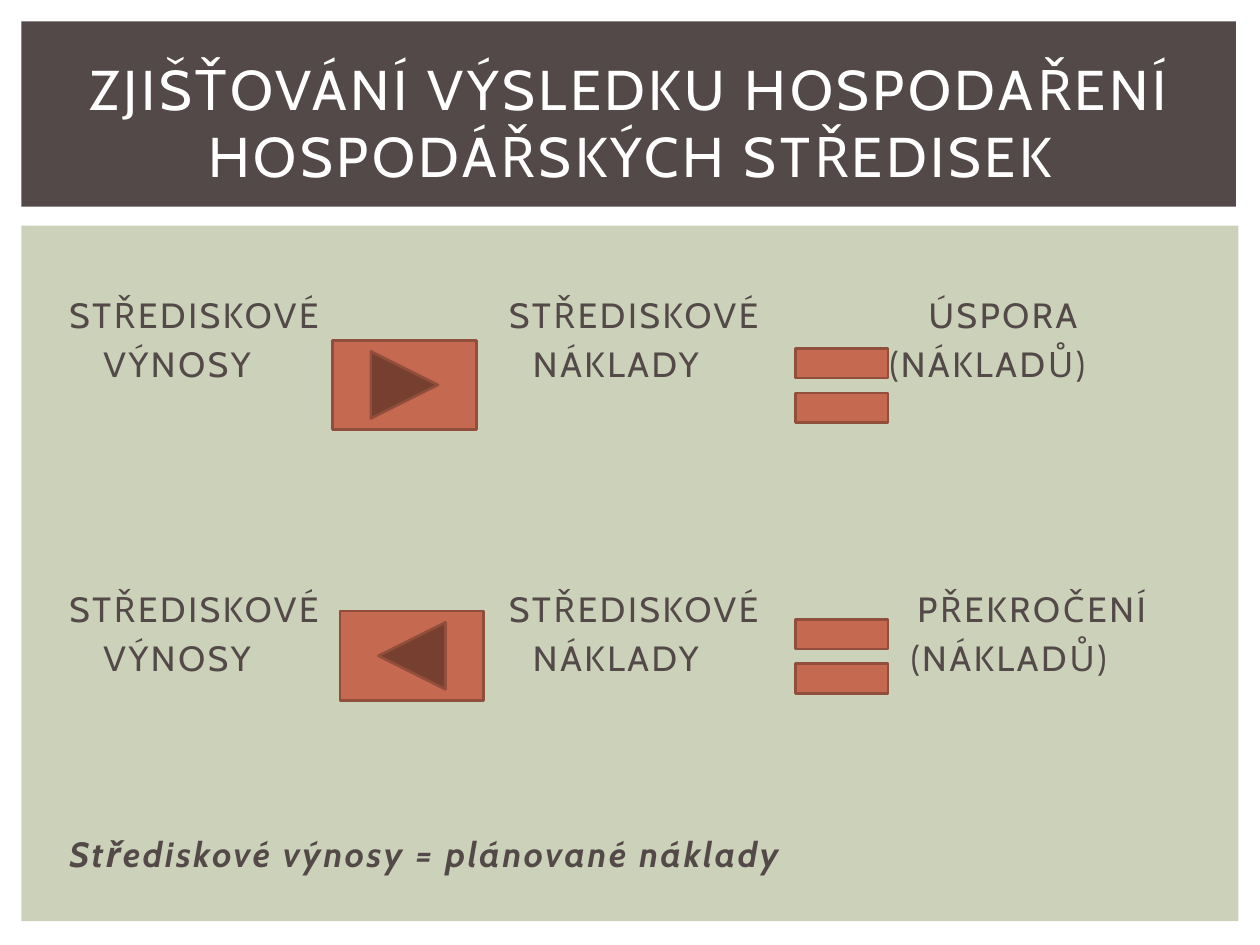
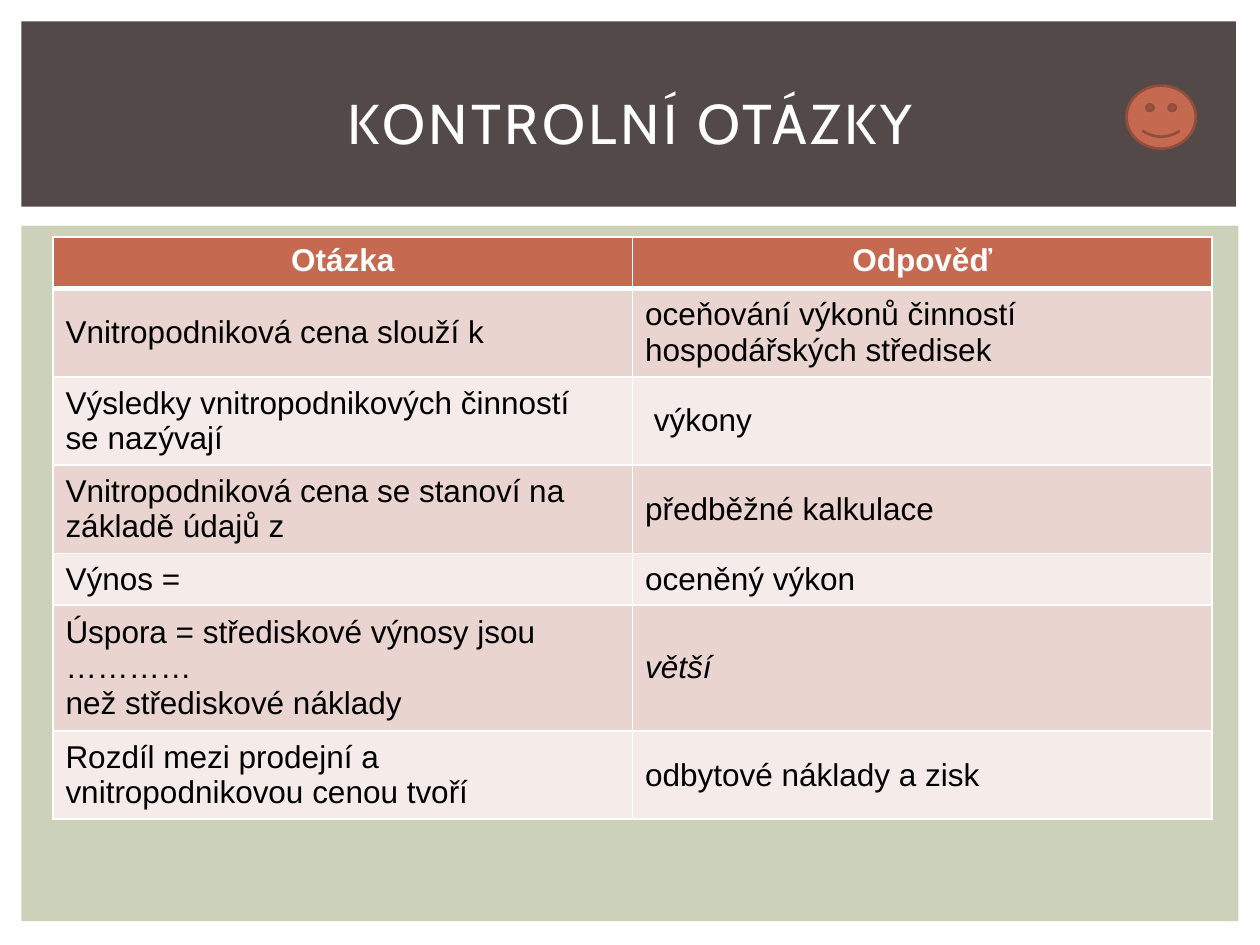
"""Build two slides on the results of cost centres and save them as out.pptx."""
from dataclasses import dataclass

from lxml import etree
from pptx import Presentation
from pptx.dml.color import RGBColor
from pptx.enum import shapes, text
from pptx.oxml import ns
from pptx.util import Inches, Pt

SHAPE = shapes.MSO_SHAPE
ALIGN = text.PP_ALIGN
ANCHOR = text.MSO_ANCHOR


@dataclass(frozen=True)
class Theme:
    """Colours, fonts and type sizes shared by the slides."""
    dark: str = "534949"
    panel: str = "CCD1B9"
    accent: str = "C66951"
    edge: str = "924E3C"
    white: str = "FFFFFF"
    black: str = "000000"
    rows: tuple = ("EAD4D0", "F5EBE9")
    head_font: str = "Cabin"
    table_font: str = "Arial"
    title_size: int = 32
    body_size: int = 20
    table_size: int = 18


THEME = Theme()

PANEL = (0.17, 1.79, 9.66, 5.52)
BAND = (0.17, 0.17, 9.64, 1.47)
TITLE = (0.42, 0.39, 9.17, 1.15)
EQUATIONS = (0.55, 2.33, 9.05, 4.7)
TABLE = (0.42, 1.88, 9.2, 2.87)

RESULT_TITLE = "ZJIŠŤOVÁNÍ VÝSLEDKU HOSPODAŘENÍ HOSPODÁŘSKÝCH STŘEDISEK"
LINE_PITCH, LINE_HEIGHT = 28, 24
EQUATION_LINES = [
    (0, [(0, "STŘEDISKOVÉ"), (3.49, "STŘEDISKOVÉ"), (6.82, "ÚSPORA")]),
    (1, [(0.27, "VÝNOSY"), (3.68, "NÁKLADY"), (6.51, "(NÁKLADŮ)")]),
    (5, [(0, "STŘEDISKOVÉ"), (3.49, "STŘEDISKOVÉ"), (6.73, "PŘEKROČENÍ")]),
    (1, [(0.27, "VÝNOSY"), (3.68, "NÁKLADY"), (6.68, "(NÁKLADŮ)")]),
]
SUMMARY = (4, [(0, "Střediskové výnosy = plánované náklady")])
SIGNS = [
    (SHAPE.ACTION_BUTTON_FORWARD_OR_NEXT, (2.64, 2.7, 1.14, 0.71)),
    (SHAPE.ACTION_BUTTON_BACK_OR_PREVIOUS, (2.7, 4.85, 1.14, 0.71)),
    (SHAPE.MATH_EQUAL, (6.18, 2.56, 1, 1)),
    (SHAPE.MATH_EQUAL, (6.18, 4.71, 1, 1)),
]

QUIZ_TITLE = "KONTROLNÍ OTÁZKY"
SMILEY = (SHAPE.SMILEY_FACE, (8.94, 0.68, 0.55, 0.5))
HEADER = ("Otázka", "Odpověď")
QUESTIONS = [
    ("Vnitropodniková cena slouží k",
     "oceňování výkonů činností hospodářských středisek"),
    ("Výsledky vnitropodnikových činností\nse nazývají", " výkony"),
    ("Vnitropodniková cena se stanoví na základě údajů z",
     "předběžné kalkulace"),
    ("Výnos =", "oceněný výkon"),
    ("Úspora = střediskové výnosy jsou …………\nnež střediskové náklady",
     "větší"),
    ("Rozdíl mezi prodejní a vnitropodnikovou cenou tvoří",
     "odbytové náklady a zisk"),
]
ITALIC_ANSWER = "větší"

TITLE_FORMAT = dict(name=THEME.head_font, size=Pt(THEME.title_size))
BODY_FORMAT = dict(name=THEME.head_font, size=Pt(THEME.body_size))
TABLE_FORMAT = dict(name=THEME.table_font, size=Pt(THEME.table_size))


def inches(place):
    return [Inches(length) for length in place]


def apply(target, values):
    for name, value in values.items():
        setattr(target, name, value)


def paint(fill, color):
    fill.solid()
    fill.fore_color.rgb = RGBColor.from_string(color)


def write(para, words, values, color, spacing=0):
    span = para.add_run()
    span.text = words
    apply(span.font, values)
    span.font.color.rgb = RGBColor.from_string(color)
    if spacing:
        span.font._element.set("spc", str(round(spacing * 100)))


def add_box(page, place, **frame_values):
    frame = page.shapes.add_textbox(*inches(place)).text_frame
    apply(frame, dict(word_wrap=True, **frame_values))
    return frame


def add_figure(page, kind, place, color=THEME.accent, edge=THEME.edge):
    figure = page.shapes.add_shape(kind, *inches(place))
    figure.shadow.inherit = False
    paint(figure.fill, color)
    if edge:
        paint(figure.line.fill, edge)
        figure.line.width = Pt(1.5)
    else:
        figure.line.fill.background()


def add_page(deck, title):
    page = deck.slides.add_slide(deck.slide_layouts[6])
    add_figure(page, SHAPE.RECTANGLE, PANEL, THEME.panel, None)
    add_figure(page, SHAPE.RECTANGLE, BAND, THEME.dark, None)
    para = add_box(page, TITLE, vertical_anchor=ANCHOR.MIDDLE).paragraphs[0]
    para.alignment = ALIGN.CENTER
    write(para, title, TITLE_FORMAT, THEME.white, 2)
    return page


def set_tabs(para, stops):
    tabs = etree.SubElement(para._p.get_or_add_pPr(), ns.qn("a:tabLst"))
    for stop in stops:
        etree.SubElement(tabs, ns.qn("a:tab"), pos=str(Inches(stop)), algn="l")


def add_equations(page):
    frame = add_box(page, EQUATIONS, margin_left=0, margin_right=0,
                    margin_top=0, margin_bottom=0)
    for line in EQUATION_LINES + [SUMMARY]:
        steps, labels = line
        para = frame.paragraphs[0]
        if steps:
            para = frame.add_paragraph()
            para.space_before = Pt(steps * LINE_PITCH - LINE_HEIGHT)
        set_tabs(para, [stop for stop, _ in labels if stop])
        words = "".join(("\t" if stop else "") + label for stop, label in labels)
        strong = True if line is SUMMARY else None
        write(para, words, dict(BODY_FORMAT, bold=strong, italic=strong),
              THEME.dark, 1.5)


def set_borders(cell, widths):
    for side, width in widths.items():
        line = etree.SubElement(cell._tc.get_or_add_tcPr(), ns.qn(f"a:ln{side}"),
                                w=str(Pt(width)))
        fill = etree.SubElement(line, ns.qn("a:solidFill"))
        etree.SubElement(fill, ns.qn("a:srgbClr"), val=THEME.white)


def fill_cell(cell, words, row):
    header = row == 0
    set_borders(cell, dict(L=1, R=1, T=3 if row == 1 else 1, B=3 if header else 1))
    paint(cell.fill, THEME.accent if header else THEME.rows[(row - 1) % 2])
    cell.vertical_anchor = ANCHOR.TOP if header else ANCHOR.MIDDLE
    values = dict(TABLE_FORMAT, bold=header, italic=words == ITALIC_ANSWER)
    for index, line in enumerate(words.split("\n")):
        frame = cell.text_frame
        para = frame.add_paragraph() if index else frame.paragraphs[0]
        para.alignment = ALIGN.CENTER if header else ALIGN.LEFT
        write(para, line, values, THEME.white if header else THEME.black)


def add_quiz(page):
    rows = [HEADER] + QUESTIONS
    table = page.shapes.add_table(len(rows), len(HEADER), *inches(TABLE)).table
    for row, entries in enumerate(rows):
        for column, words in enumerate(entries):
            fill_cell(table.cell(row, column), words, row)


def main():
    deck = Presentation()
    apply(deck, dict(slide_width=Inches(10), slide_height=Inches(7.5)))
    result = add_page(deck, RESULT_TITLE)
    add_equations(result)
    for kind, place in SIGNS:
        add_figure(result, kind, place)
    quiz = add_page(deck, QUIZ_TITLE)
    add_quiz(quiz)
    add_figure(quiz, *SMILEY)
    deck.save("out.pptx")


if __name__ == "__main__":
    main()
